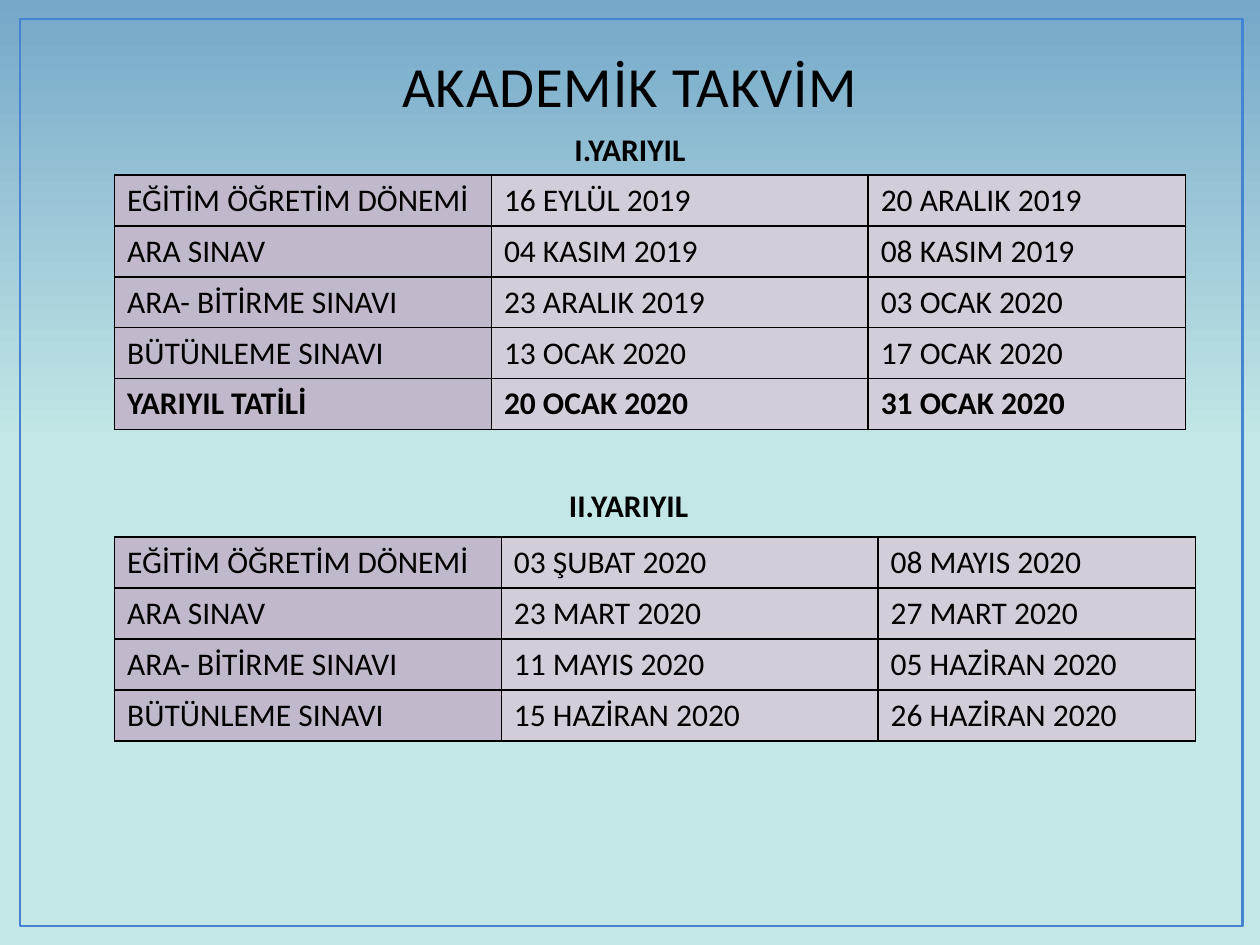
from lxml.etree import SubElement
from pptx import Presentation
from pptx.dml.color import RGBColor
from pptx.enum.shapes import MSO_SHAPE
from pptx.enum.text import MSO_ANCHOR, PP_ALIGN
from pptx.oxml import parse_xml
from pptx.oxml.ns import qn
from pptx.util import Pt

FONT = "Calibri"
ROW_HEIGHT = 29.1
NS = 'xmlns:a="http://schemas.openxmlformats.org/drawingml/2006/main"'
COLORS = {
    "sky": "75A8C9",
    "mint": "C3E7E6",
    "frame": "4584D3",
    "text": "000000",
    "outline": "016296",
    "border": "000000",
    "label": "C1B9CB",
    "date": "D3CDD9",
}
FALL = [
    ("EĞİTİM ÖĞRETİM DÖNEMİ", "16 EYLÜL 2019", "20 ARALIK 2019"),
    ("ARA SINAV", "04 KASIM 2019", "08 KASIM 2019"),
    ("ARA- BİTİRME SINAVI", "23 ARALIK 2019", "03 OCAK 2020"),
    ("BÜTÜNLEME SINAVI", "13 OCAK 2020", "17 OCAK 2020"),
    ("YARIYIL TATİLİ", "20 OCAK 2020", "31 OCAK 2020"),
]
SPRING = [
    ("EĞİTİM ÖĞRETİM DÖNEMİ", "03 ŞUBAT 2020", "08 MAYIS 2020"),
    ("ARA SINAV", "23 MART 2020", "27 MART 2020"),
    ("ARA- BİTİRME SINAVI", "11 MAYIS 2020", "05 HAZİRAN 2020"),
    ("BÜTÜNLEME SINAVI", "15 HAZİRAN 2020", "26 HAZİRAN 2020"),
]


def color(name):
    return RGBColor.from_string(COLORS[name])


def set_background(s):
    fill = s.background.fill
    fill.gradient()
    fill.gradient_angle = 90
    for stop, position, name in zip(fill.gradient_stops, (0.53, 1), ("mint", "sky")):
        stop.position = position
        stop.color.rgb = color(name)


def add_frame(s):
    sp = s.shapes.add_shape(MSO_SHAPE.RECTANGLE, Pt(11.5), Pt(10.8), Pt(698.4), Pt(518.4))
    sp.shadow.inherit = False
    sp.fill.background()
    sp.line.color.rgb = color("frame")
    sp.line.width = Pt(1.5)


def style_run(r, size=18, bold=False):
    r.font.name = FONT
    r.font.size = Pt(size)
    r.font.bold = bold
    r.font.color.rgb = color("text")


def add_heading(s, text, left, top, width, height, size=18, bold=True, anchor=MSO_ANCHOR.TOP):
    tf = s.shapes.add_textbox(Pt(left), Pt(top), Pt(width), Pt(height)).text_frame
    tf.word_wrap = True
    tf.vertical_anchor = anchor
    p = tf.paragraphs[0]
    p.text = text
    p.alignment = PP_ALIGN.CENTER
    r = p.runs[0]
    style_run(r, size, bold)
    return r


def add_title(s, text):
    r = add_heading(s, text, 36, 21.6, 648, 49.7, 32.4, False, MSO_ANCHOR.BOTTOM)
    rpr = r.font._element
    rpr.set("spc", "50")
    rpr.insert(0, parse_xml(
        f'<a:ln {NS} w="{Pt(1.05)}"><a:solidFill>'
        f'<a:srgbClr val="{COLORS["outline"]}"/></a:solidFill></a:ln>'))


def set_borders(cell):
    tcpr = cell._tc.get_or_add_tcPr()
    for i, side in enumerate(("lnL", "lnR", "lnT", "lnB")):
        ln = parse_xml(f'<a:{side} {NS} w="{Pt(1)}"/>')
        fill = SubElement(ln, qn("a:solidFill"))
        SubElement(fill, qn("a:srgbClr")).set("val", COLORS["border"])
        tcpr.insert(i, ln)


def add_calendar(s, rows, top, widths, bold_row=None):
    table = s.shapes.add_table(len(rows), len(widths), Pt(65.5), Pt(top),
                               Pt(sum(widths)), Pt(ROW_HEIGHT * len(rows))).table
    table.first_row = False
    table.horz_banding = False
    for column, width in zip(table.columns, widths):
        column.width = Pt(width)
    for i, row in enumerate(rows):
        table.rows[i].height = Pt(ROW_HEIGHT)
        for j, text in enumerate(row):
            cell = table.cell(i, j)
            cell.fill.solid()
            cell.fill.fore_color.rgb = color("date" if j else "label")
            set_borders(cell)
            cell.text_frame.text = text
            style_run(cell.text_frame.paragraphs[0].runs[0], bold=i == bold_row)


def main():
    prs = Presentation()
    prs.slide_width, prs.slide_height = Pt(720), Pt(540)
    s = prs.slides.add_slide(prs.slide_layouts[6])
    set_background(s)
    add_frame(s)
    add_title(s, "AKADEMİK TAKVİM")
    add_heading(s, "I.YARIYIL", 0, 70.8, 720, 29)
    add_calendar(s, FALL, 100, (215.3, 215.3, 181.4), bold_row=4)
    add_heading(s, "II.YARIYIL", -0.8, 274.3, 720, 29)
    add_calendar(s, SPRING, 307, (221, 215.3, 181.4))
    prs.save("out.pptx")


if __name__ == "__main__":
    main()
